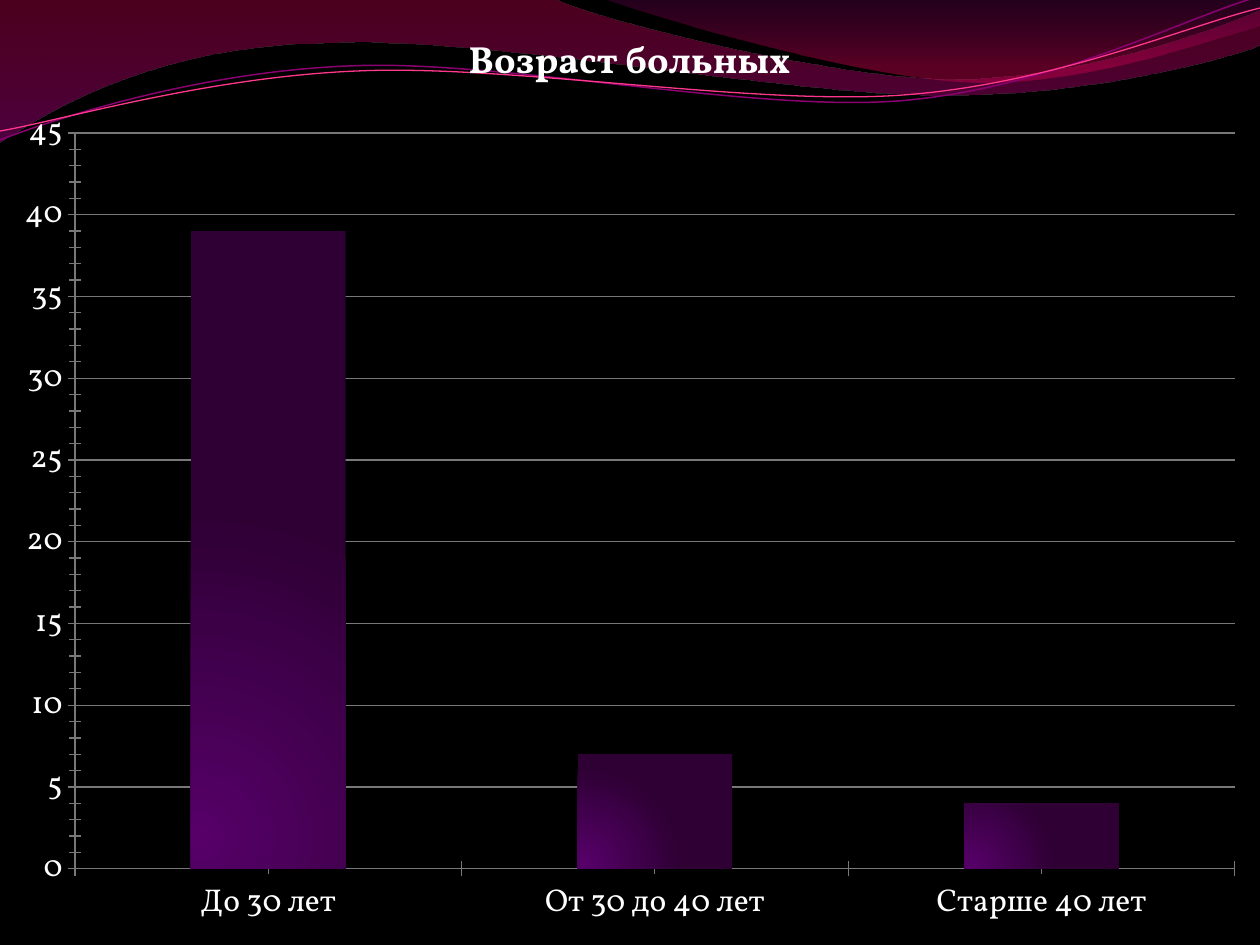
import math
from lxml import etree
from pptx import Presentation
from pptx.chart.data import CategoryChartData
from pptx.dml.color import RGBColor
from pptx.enum.chart import XL_CHART_TYPE, XL_TICK_MARK
from pptx.oxml import parse_xml
from pptx.oxml.ns import qn
from pptx.util import Emu, Pt

COLUMN = XL_CHART_TYPE.COLUMN_STACKED
CROSS = XL_TICK_MARK.CROSS
NS = ('xmlns:a="http://schemas.openxmlformats.org/drawingml/2006/main" '
      'xmlns:c="http://schemas.openxmlformats.org/drawingml/2006/chart"')
PX = 914400 / 126
WIDE, HIGH = 1260, 945
FONT, WHITE, GREY = "Vollkorn", "FFFFFF", "787878"

# Content
TITLE = "Возраст больных"
AGES = {"До 30 лет": 39, "От 30 до 40 лет": 7, "Старше 40 лет": 4}
PLOT = {"x": 75 / WIDE, "y": 133 / HIGH, "w": 1160 / WIDE, "h": 736 / HIGH}

# Outlines in px: a pair is a straight step, six numbers are a Bezier curve
LINEAR = '<a:lin ang="5400000" scaled="0"/>'
RADIAL = ('<a:path path="circle">'
          '<a:fillToRect l="5000" t="95000" r="95000" b="5000"/></a:path>')
WAVES = [
    ([(0, 0), (554, -1), (600, 21, 837, 79, 955, 79),
      (1075, 79, 1207, 33, 1260, 11), (1261, 45),
      (1239, 55, 1096, 96, 940, 95), (784, 95, 481, 35, 324, 43),
      (163, 45, 58, 105, -1, 142), (0, 0)],
     [(0, "A90042", 45), (100, "8E0073", 55)]),
    ([(604, -1), (641, 14, 859, 78, 969, 82),
      (1079, 87, 1211, 40, 1260, 26), (1260, 0), (604, -1)],
     [(0, "73005E", 30), (80, "C9004F", 45)]),
]
CURVES = [
    ([(0, 140), (60, 117, 199, 72, 349, 66), (498, 59, 747, 112, 898, 101),
      (1050, 89, 1182, 19, 1257, -3)], "8A0070", 0.85, (629, 72)),
    ([(0, 131), (59, 121, 207, 77, 357, 71), (508, 64, 752, 106, 903, 95),
      (1053, 84, 1186, 26, 1260, 8)], "FF388C", 0.75, (629, 74)),
]
TILT = 2.7
BAR = [(0, "560068", 100), (100, "2E0034", 100)]


def rgb(code):
    return RGBColor.from_string(code)


def style(font, size=18, bold=False, color=WHITE):
    font.name, font.size, font.bold = FONT, Pt(size), bold
    font.color.rgb = rgb(color)


def write(frame, text, **form):
    run = frame.paragraphs[0].add_run()
    run.text = text
    style(run.font, **form)


def shade(fill, node, stops, way):
    """Put a gradient in place of the solid fill of node."""
    fill.solid()
    marks = "".join(
        f'<a:gs pos="{pos * 1000}"><a:srgbClr val="{code}">'
        f'<a:alpha val="{alpha * 1000}"/></a:srgbClr></a:gs>'
        for pos, code, alpha in stops)
    old = next(node.iter(qn("a:solidFill")))
    old.getparent().replace(old, parse_xml(
        f'<a:gradFill {NS} rotWithShape="1"><a:gsLst>{marks}</a:gsLst>'
        f'{way}</a:gradFill>'))


def pairs(step):
    return list(zip(step[::2], step[1::2]))


def turn(steps, mid, angle):
    cos, sin = math.cos(math.radians(angle)), math.sin(math.radians(angle))
    done = []
    for step in steps:
        flat = []
        for x, y in pairs(step):
            dx, dy = x - mid[0], y - mid[1]
            flat += [mid[0] + dx * cos - dy * sin,
                     mid[1] + dx * sin + dy * cos]
        done.append(tuple(flat))
    return done


def trace(steps, count=24):
    """List points along the steps, to find the true bounds."""
    points = [steps[0]]
    for step in steps[1:]:
        if len(step) == 2:
            points.append(step)
            continue
        knots = [points[-1]] + pairs(step)
        for i in range(1, count + 1):
            t = i / count
            parts = [math.comb(3, k) * t ** k * (1 - t) ** (3 - k)
                     for k in range(4)]
            points.append(tuple(sum(w * knot[axis] for w, knot
                                    in zip(parts, knots)) for axis in (0, 1)))
    return points


def draw(shapes, steps, close):
    spots = [(round(x * PX), round(y * PX)) for x, y in trace(steps)]
    build = shapes.build_freeform(*spots[0], scale=1.0)
    build.add_line_segments(spots[1:], close=close)
    shape = build.convert_to_shape()
    shape.shadow.inherit = False

    # Swap the straight segments for true curves
    route = next(shape._element.iter(qn("a:path")))
    for node in list(route):
        route.remove(node)
    for i, step in enumerate(steps):
        kind = "lnTo" if len(step) == 2 else "cubicBezTo"
        node = etree.SubElement(route, qn(f"a:{kind if i else 'moveTo'}"))
        for x, y in pairs(step):
            etree.SubElement(node, qn("a:pt"),
                             x=str(round(x * PX) - shape.left),
                             y=str(round(y * PX) - shape.top))
    if close:
        etree.SubElement(route, qn("a:close"))
    return shape


def place(area):
    """Fix the inner plot area."""
    for old in area.findall(qn("c:layout")):
        area.remove(old)
    sizes = "".join(f'<c:{key} val="{val:.4f}"/>'
                    for key, val in PLOT.items())
    area.insert(0, parse_xml(
        f'<c:layout {NS}><c:manualLayout><c:layoutTarget val="inner"/>'
        f'<c:xMode val="edge"/><c:yMode val="edge"/>{sizes}'
        '</c:manualLayout></c:layout>'))


def add_chart(shapes):
    data = CategoryChartData()
    data.categories = list(AGES)
    data.add_series("Series 1", list(AGES.values()))
    chart = shapes.add_chart(COLUMN, 0, 0, Emu(round(WIDE * PX)),
                             Emu(round(HIGH * PX)), data).chart
    style(chart.font)
    chart.has_legend = False
    chart.has_title = True
    write(chart.chart_title.text_frame, TITLE, size=21.6, bold=True)
    chart.chart_title._element.find(qn("c:overlay")).set("val", "1")

    # Bars
    plot = chart.plots[0]
    plot.gap_width, plot.overlap, plot.vary_by_categories = 150, 100, False
    place(chart._chartSpace.chart.plotArea)
    bars = plot.series[0]
    shade(bars.format.fill, bars._element, BAR, RADIAL)

    # Axes, shown by default without a delete flag
    ages, scale = chart.category_axis, chart.value_axis
    scale.minimum_scale, scale.maximum_scale = 0, 45
    scale.major_unit, scale.minor_unit = 5, 1
    scale.has_major_gridlines = True
    for axis in (ages, scale):
        axis.major_tick_mark = axis.minor_tick_mark = CROSS
        style(axis.tick_labels.font)
        for flag in axis._element.findall(qn("c:delete")):
            axis._element.remove(flag)
    for part in (ages, scale, scale.major_gridlines):
        part.format.line.color.rgb = rgb(GREY)
        part.format.line.width = Pt(0.75)


def main():
    deck = Presentation()
    deck.slide_width = Emu(round(WIDE * PX))
    deck.slide_height = Emu(round(HIGH * PX))
    slide = deck.slides.add_slide(deck.slide_layouts[6])
    slide.background.fill.solid()
    slide.background.fill.fore_color.rgb = rgb("000000")

    # Waves along the top
    for steps, stops in WAVES:
        wave = draw(slide.shapes, steps, True)
        shade(wave.fill, wave._element, stops, LINEAR)
        wave.line.fill.background()
    for steps, color, width, mid in CURVES:
        curve = draw(slide.shapes, turn(steps, mid, TILT), False)
        curve.rotation = -TILT
        curve.fill.background()
        curve.line.color.rgb = rgb(color)
        curve.line.width = Pt(width)

    add_chart(slide.shapes)
    deck.save("out.pptx")


if __name__ == "__main__":
    main()
